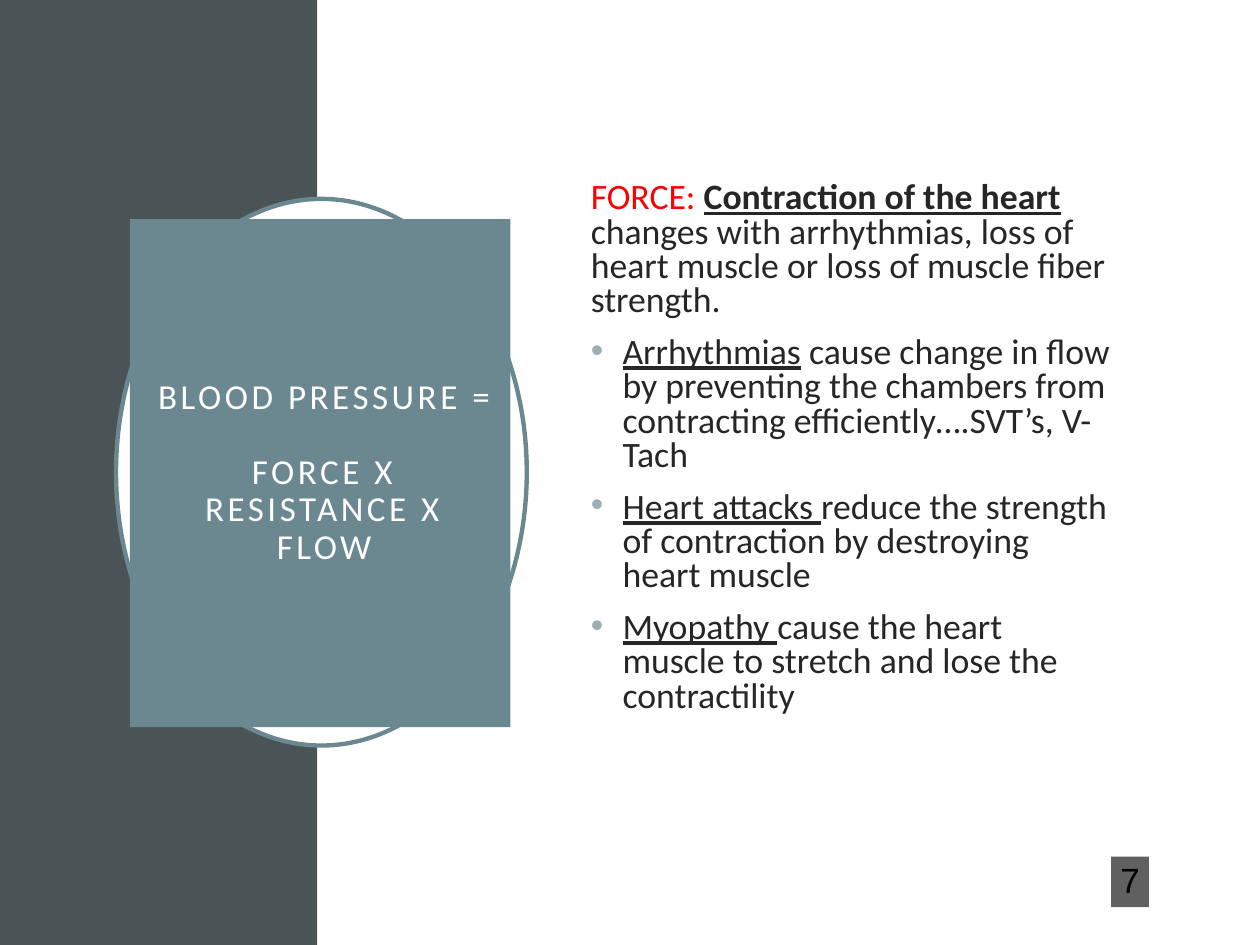
from lxml import etree
from pptx import Presentation
from pptx import util as u
from pptx.dml.color import RGBColor
from pptx.enum import shapes, text
from pptx.oxml import ns

SLATE, TEAL, WHITE, RED = "4A5356", "6B8891", "FFFFFF", "FF0000"
INK, BULLET, CHARCOAL, BLACK = "262626", "9BAFB5", "1D1D1D", "000000"


def color(value):
    return RGBColor.from_string(value)


def add_child(parent, tag, **attributes):
    return etree.SubElement(parent, ns.qn(tag), attributes)


def add_text(paragraph, wording, size=20, font="Calibri", ink=INK,
             bold=False, underline=False, spacing=0):
    """Add one formatted run; size and spacing are in points."""
    run = paragraph.add_run()
    run.text = wording
    run.font.name = font
    run.font.size = u.Pt(size)
    run.font.bold = bold
    run.font.underline = underline
    run.font.color.rgb = color(ink)
    if spacing:
        run.font._element.set("spc", str(spacing * 100))


class SlideBuilder:
    """Holds the current slide and its style; places are in centimetres."""

    body_size = 20.4
    body_leading = 0.8
    heading_leading = 0.9
    bullet_indent = u.Cm(0.64)

    def __init__(self, presentation):
        self.slide = presentation.slides.add_slide(presentation.slide_layouts[6])

    def shape(self, kind, place, fill, line=None, opacity=None):
        shape = self.slide.shapes.add_shape(kind, *map(u.Cm, place))
        shape.shadow.inherit = False
        shape.fill.solid()
        shape.fill.fore_color.rgb = color(fill)
        if opacity:
            fill_color = shape.fill._xPr.find(".//" + ns.qn("a:srgbClr"))
            add_child(fill_color, "a:alpha", val=str(opacity * 1000))
        if line:
            shape.line.color.rgb = color(line)
            shape.line.width = u.Pt(2.5)
        else:
            shape.line.fill.background()
        return shape

    def rectangle(self, place, fill, **options):
        return self.shape(shapes.MSO_SHAPE.RECTANGLE, place, fill, **options)

    def ellipse(self, place, fill, **options):
        return self.shape(shapes.MSO_SHAPE.OVAL, place, fill, **options)

    def frame(self, shape, left, top, right, bottom):
        frame = shape.text_frame
        frame.word_wrap = True
        frame.vertical_anchor = text.MSO_ANCHOR.MIDDLE
        frame.margin_left, frame.margin_top = u.Cm(left), u.Cm(top)
        frame.margin_right, frame.margin_bottom = u.Cm(right), u.Cm(bottom)
        return frame

    def centred_lines(self, shape, lines, margins, gap=0, **style):
        frame = self.frame(shape, *margins)
        for index, line in enumerate(lines):
            paragraph = frame.add_paragraph() if index else frame.paragraphs[0]
            paragraph.alignment = text.PP_ALIGN.CENTER
            paragraph.line_spacing = self.heading_leading
            if index:
                paragraph.space_before = u.Pt(gap)
            add_text(paragraph, line, **style)

    def bullet(self, paragraph):
        properties = paragraph._p.get_or_add_pPr()
        properties.set("marL", str(self.bullet_indent))
        properties.set("indent", str(-self.bullet_indent))
        add_child(add_child(properties, "a:buClr"), "a:srgbClr", val=BULLET)
        add_child(properties, "a:buFont", typeface="Arial")
        add_child(properties, "a:buChar", char="•")

    def body(self, place, margins, intro, bullets):
        box = self.slide.shapes.add_textbox(*map(u.Cm, place))
        frame = self.frame(box, *margins)
        paragraph = frame.paragraphs[0]
        paragraph.line_spacing = self.body_leading
        for wording, style in intro:
            add_text(paragraph, wording, size=self.body_size, **style)
        for term, explanation in bullets:
            paragraph = frame.add_paragraph()
            self.bullet(paragraph)
            paragraph.line_spacing = self.body_leading
            paragraph.space_before = u.Pt(10)
            add_text(paragraph, term, size=self.body_size, underline=True)
            add_text(paragraph, explanation, size=self.body_size)


def main():
    presentation = Presentation()
    presentation.slide_width, presentation.slide_height = u.Cm(25.4), u.Cm(19.05)
    builder = SlideBuilder(presentation)

    # Background panels
    builder.rectangle((0, 0, 6.4, 19.05), SLATE)
    builder.rectangle((6.4, 0, 19, 19.05), WHITE)

    # Title panel over its ring
    builder.ellipse((2.34, 4.01, 8.28, 11.02), WHITE, line=TEAL)
    title = builder.rectangle((2.62, 4.42, 7.67, 10.24), TEAL)
    builder.centred_lines(
        title, ["BLOOD PRESSURE =", "FORCE X RESISTANCE X FLOW"],
        margins=(0.46, 0.5, 0.3, 0.5), gap=21, ink=WHITE, spacing=2)

    # Explanation of force
    builder.body(
        (11.66, 3.38, 11.07, 11.76),
        margins=(0.25, 0.13, 0.36, 0.56),
        intro=[
            ("FORCE: ", {"ink": RED}),
            ("Contraction of the heart ", {"bold": True, "underline": True}),
            ("changes with arrhythmias, loss of heart muscle or loss of "
             "muscle fiber strength.", {}),
        ],
        bullets=[
            ("Arrhythmias", " cause change in flow by preventing the chambers "
             "from contracting efficiently….SVT’s, V-Tach"),
            ("Heart attacks ", "reduce the strength of contraction by "
             "destroying heart muscle"),
            ("Myopathy ", "cause the heart muscle to stretch and lose the "
             "contractility"),
        ])

    # Slide number
    number = builder.rectangle((22.4, 17.27, 0.76, 1.02), CHARCOAL, opacity=70)
    builder.centred_lines(number, ["7"], margins=(0.05, 0.13, 0.05, 0.13),
                          font="Arial", ink=BLACK)

    presentation.save("out.pptx")


if __name__ == "__main__":
    main()
